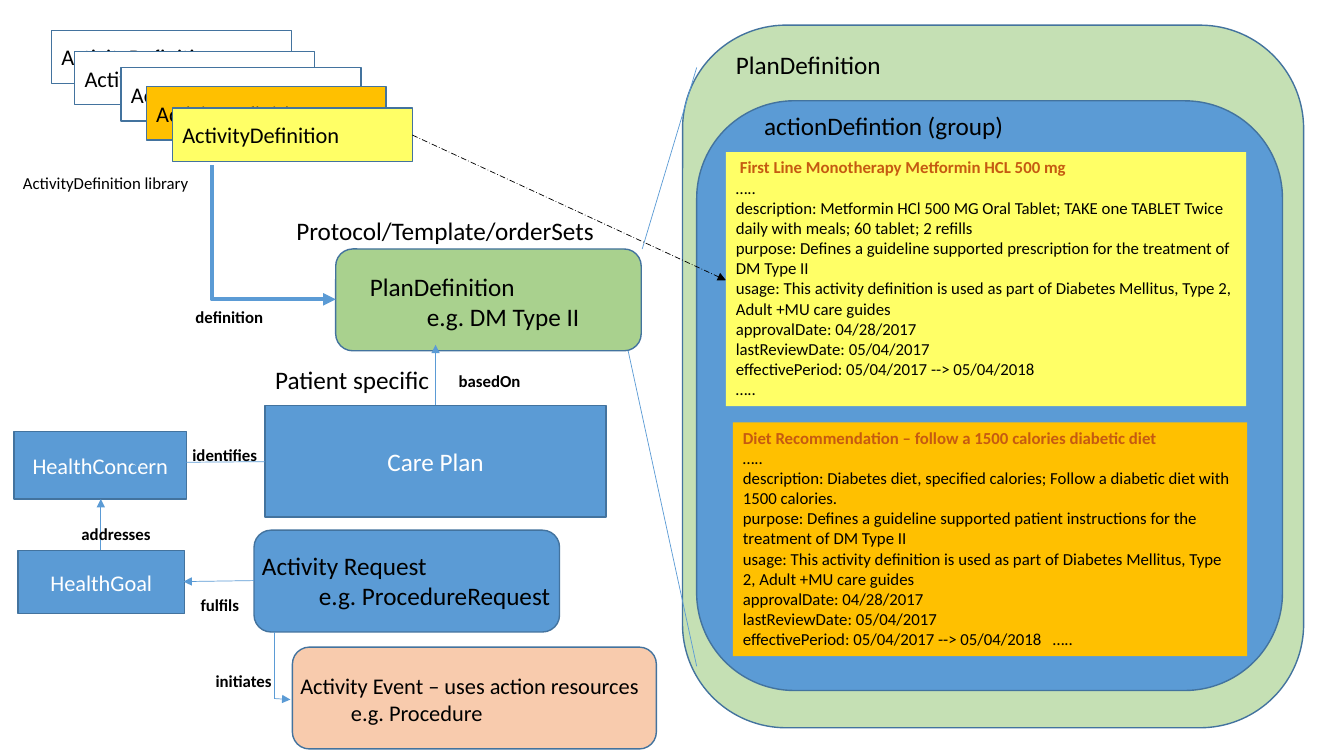
from lxml.etree import SubElement
from pptx import Presentation
from pptx.dml.color import RGBColor
from pptx.enum.dml import MSO_LINE
from pptx.enum.shapes import MSO_CONNECTOR, MSO_SHAPE
from pptx.enum.text import MSO_ANCHOR, MSO_AUTO_SIZE, PP_ALIGN
from pptx.oxml.ns import qn
from pptx.util import Inches, Pt

COLORS = {
    "blue": "5B9BD5", "edge": "43739E", "green": "A9D18E", "pale": "C5E0B4",
    "peach": "F8CBAD", "yellow": "FFFF66", "orange": "FFC000",
    "rust": "C55A11", "black": "000000", "white": "FFFFFF",
}
RECT, ROUND = MSO_SHAPE.RECTANGLE, MSO_SHAPE.ROUNDED_RECTANGLE

METFORMIN = [
    "First Line Monotherapy Metformin HCL 500 mg",
    "…..",
    "description: Metformin HCl 500 MG Oral Tablet; TAKE one TABLET Twice daily with meals; 60 tablet; 2 refills",
    "purpose: Defines a guideline supported prescription for the treatment of DM Type II",
    "usage: This activity definition is used as part of Diabetes Mellitus, Type 2, Adult +MU care guides",
    "approvalDate: 04/28/2017",
    "lastReviewDate: 05/04/2017",
    "effectivePeriod: 05/04/2017 --> 05/04/2018",
    "…..",
]
DIET = [
    "Diet Recommendation – follow a 1500 calories diabetic diet",
    "…..",
    "description: Diabetes diet, specified calories; Follow a diabetic diet with 1500 calories.",
    "purpose: Defines a guideline supported patient instructions for the treatment of DM Type II",
    "usage: This activity definition is used as part of Diabetes Mellitus, Type 2, Adult +MU care guides",
    "approvalDate: 04/28/2017",
    "lastReviewDate: 05/04/2017",
    "effectivePeriod: 05/04/2017 --> 05/04/2018   …..",
]


def rgb(name):
    """Return the named palette colour."""
    return RGBColor.from_string(COLORS[name])


def write(tf, lines, size, color="black", bold=False, align=PP_ALIGN.LEFT):
    """Write one paragraph per line and return the paragraphs."""
    for i, line in enumerate(lines):
        p = tf.paragraphs[0] if i == 0 else tf.add_paragraph()
        p.text, p.alignment = line, align
        p.font.name, p.font.size, p.font.bold = "Calibri", Pt(size), bold
        p.font.color.rgb = rgb(color)
    return tf.paragraphs


def indent(p, inches):
    """Indent the first line of a paragraph."""
    p._p.get_or_add_pPr().set("indent", str(Inches(inches)))


def label(s, x, y, w, h, lines, size, bold=False, wrap=True):
    """Add a text box and return its paragraphs."""
    tf = s.shapes.add_textbox(Inches(x), Inches(y), Inches(w), Inches(h)).text_frame
    tf.word_wrap = wrap
    tf.auto_size = MSO_AUTO_SIZE.SHAPE_TO_FIT_TEXT
    return write(tf, lines, size, bold=bold)


def tag(s, x, y, text):
    """Add a bold relationship name."""
    label(s, x, y, 1.32, 0.3, [text], 12, bold=True)


def box(s, kind, x, y, w, h, fill=None, edge="edge"):
    """Add a flat shape and return it."""
    sp = s.shapes.add_shape(kind, Inches(x), Inches(y), Inches(w), Inches(h))
    sp.shadow.inherit = False
    if fill:
        sp.fill.solid()
        sp.fill.fore_color.rgb = rgb(fill)
    else:
        sp.fill.background()
    if edge:
        sp.line.color.rgb, sp.line.width = rgb(edge), Pt(1)
    else:
        sp.line.fill.background()
    return sp


def node(s, x, y, w, h, text, size, fill="blue", color="white", align=PP_ALIGN.CENTER):
    """Add a rectangle with one line of text in its middle."""
    tf = box(s, RECT, x, y, w, h, fill).text_frame
    tf.word_wrap, tf.vertical_anchor = True, MSO_ANCHOR.MIDDLE
    write(tf, [text], size, color, align=align)


def example(s, x, y, w, h, fill, dx, dy, text_w, lines, size):
    """Add a rounded box with a heading and an indented example."""
    box(s, ROUND, x, y, w, h, fill)
    ps = label(s, x + dx, y + dy, text_w, 0.71, lines, size)
    indent(ps[1], size * 10 * 0.226 / 72)


def line(s, x1, y1, x2, y2, color="blue", width=0.5, arrow=True,
         kind=MSO_CONNECTOR.STRAIGHT):
    """Add a connector, with an arrowhead at its end if asked."""
    c = s.shapes.add_connector(kind, Inches(x1), Inches(y1), Inches(x2), Inches(y2))
    c.line.color.rgb, c.line.width = rgb(color), Pt(width)
    if arrow:
        SubElement(c.line._get_or_add_ln(), qn("a:tailEnd"), type="triangle")
    SubElement(c._element.spPr, qn("a:effectLst"))
    return c


def elbow(s, x1, y1, x2, y2):
    """Add a thick arrow that runs down and then right."""
    cx, cy, w, h = (x1 + x2) / 2, (y1 + y2) / 2, y2 - y1, x2 - x1
    c = line(s, cx - w / 2, cy - h / 2, cx + w / 2, cy + h / 2,
             width=3, kind=MSO_CONNECTOR.ELBOW)
    spPr = c._element.spPr
    spPr.find(qn("a:prstGeom")).set("prst", "bentConnector2")
    xfrm = spPr.find(qn("a:xfrm"))
    xfrm.set("rot", "16200000")
    xfrm.set("flipH", "1")


def library(s, x, y):
    """Draw the stack of activity definitions and its caption."""
    cards = [(0, 0, None), (0.23, 0.21, "white"), (0.69, 0.37, "white"),
             (0.94, 0.56, "orange"), (1.2, 0.77, "yellow")]
    for dx, dy, fill in cards:
        node(s, x + dx, y + dy, 2.38, 0.53, "ActivityDefinition", 16, fill,
             "black", PP_ALIGN.LEFT)
    label(s, x - 0.38, y + 1.36, 1.86, 0.3, ["ActivityDefinition library"], 12, wrap=False)


def protocol(s, x, y):
    """Draw the plan definition and the arrow from the library."""
    label(s, x - 0.49, y - 0.38, 3.18, 0.4, ["Protocol/Template/orderSets"], 18, wrap=False)
    example(s, x, y, 3.03, 1.01, "green", 0.24, 0.17, 3.08,
            ["PlanDefinition", "e.g. DM Type II"], 18)
    elbow(s, x - 1.23, y - 0.83, x, y + 0.5)
    tag(s, x - 1.49, y + 0.52, "definition")


def patient(s, x, y):
    """Draw the care plan with its concern, goal, request and event."""
    label(s, x, y - 0.45, 1.75, 0.4, ["Patient specific"], 18, wrap=False)
    node(s, x, y, 3.38, 1.11, "Care Plan", 18)
    node(s, x - 2.49, y + 0.26, 1.71, 0.67, "HealthConcern", 16)
    node(s, x - 2.45, y + 1.44, 1.65, 0.63, "HealthGoal", 16)
    example(s, x - 0.11, y + 1.24, 3.03, 1.01, "blue", -0.02, 0.15, 3.08,
            ["Activity Request", "e.g. ProcedureRequest"], 18)
    example(s, x + 0.27, y + 2.4, 3.61, 1.01, "peach", -0.02, 0.2, 4.23,
            ["Activity Event – uses action resources", "e.g. Procedure"], 16)
    links = [(1.69, 0, 1.69, -0.6), (0, 0.56, -1.33, 0.57),
             (-1.63, 1.44, -1.63, 0.93), (-0.11, 1.74, -0.81, 1.75),
             (0.09, 2.91, 0.25, 2.92)]
    for x1, y1, x2, y2 in links:
        line(s, x + x1, y + y1, x + x2, y + y2)
    line(s, x + 0.09, y + 2.25, x + 0.09, y + 2.91, arrow=False)
    tags = [(1.82, -0.39, "basedOn"), (-0.82, 0.34, "identifies"),
            (-1.92, 1.13, "addresses"), (-0.74, 1.83, "fulfils"),
            (-0.59, 2.59, "initiates")]
    for dx, dy, text in tags:
        tag(s, x + dx, y + dy, text)


def action(s, x, y, w, h, fill, lines):
    """Draw one action with a coloured title and return its title."""
    tf = box(s, RECT, x, y, w, h, fill, edge=None).text_frame
    tf.word_wrap, tf.vertical_anchor = True, MSO_ANCHOR.TOP
    title = write(tf, lines, 12)[0]
    title.font.bold, title.font.color.rgb = True, rgb("rust")
    return title


def plan_detail(s, x, y, w, h):
    """Draw the enlarged plan definition with its action group."""
    box(s, ROUND, x, y, w, h, "pale")
    label(s, x + 0.43, y + 0.19, 1.66, 0.4, ["PlanDefinition"], 18, wrap=False)
    box(s, ROUND, x + 0.14, y + 0.75, w - 0.35, h - 1.12, "blue")
    title = action(s, x + 0.43, y + 1.26, 5.16, 2.52, "yellow", METFORMIN)
    indent(title, 0.04)
    action(s, x + 0.5, y + 3.94, 5.1, 2.32, "orange", DIET)
    label(s, x + 0.71, y + 0.8, 2.61, 0.4, ["actionDefintion (group)"], 18, wrap=False)
    line(s, x - 0.4, y + 2.22, x + 0.14, y + 0.42, arrow=False)
    line(s, x - 0.54, y + 3.23, x + 0.14, y + 6.36, arrow=False)
    c = line(s, x - 2.68, y + 1.09, x + 0.43, y + 2.53, "black")
    c.line.dash_style = MSO_LINE.LONG_DASH_DOT


def main():
    """Build and save the slide."""
    prs = Presentation()
    prs.slide_width, prs.slide_height = Inches(13.33), Inches(7.5)
    s = prs.slides.add_slide(prs.slide_layouts[6])
    library(s, 0.51, 0.3)
    protocol(s, 3.33, 2.47)
    patient(s, 2.63, 4.02)
    plan_detail(s, 6.77, 0.25, 6.16, 6.97)
    prs.save("out.pptx")


if __name__ == "__main__":
    main()
